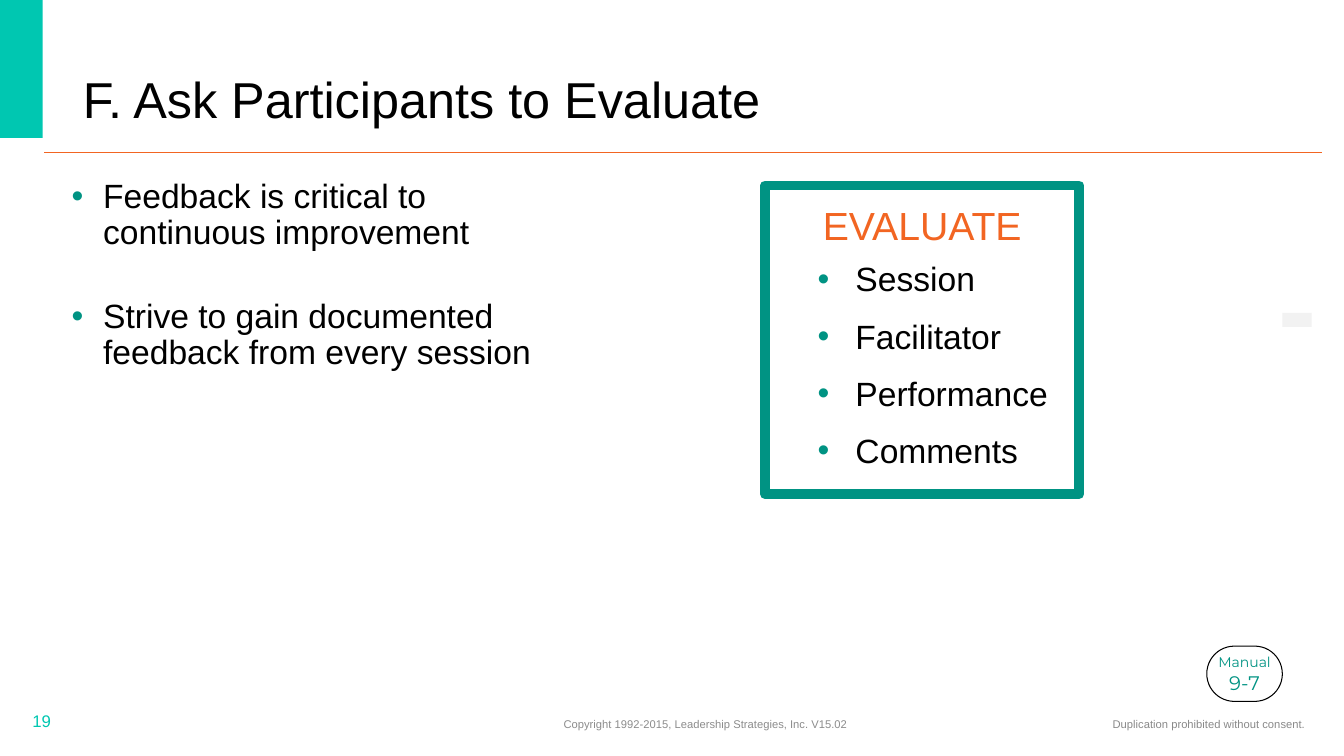
from lxml.etree import SubElement
from pptx import Presentation
from pptx.dml.color import RGBColor
from pptx.enum.shapes import MSO_CONNECTOR, MSO_SHAPE
from pptx.enum.text import MSO_ANCHOR, MSO_AUTO_SIZE, PP_ALIGN
from pptx.oxml.ns import qn
from pptx.util import Pt

# Content: each paragraph is a list of (text, size) runs
TITLE = [[("F. Ask Participants to Evaluate", 36)]]
POINTS = [[(text, 24)] for text in (
    "Feedback is critical to continuous improvement",
    "Strive to gain documented feedback from every session",
)]
EVALUATE_HEADING = [[("EVALUATE", 28)]]
EVALUATE_ITEMS = [[(text, 24)] for text in
                  ("Session", "Facilitator", "Performance", "Comments")]
MANUAL = [[("Manual\v", 10), ("9-7", 14)]]
PAGE_NUMBER = [[("19", 12)]]
COPYRIGHT = [[("Copyright 1992-2015, Leadership Strategies, Inc. V15.02", 8)]]
DUPLICATION = [[("Duplication prohibited without consent.", 8)]]

BLACK, WHITE = "000000", "FFFFFF"
TEAL, GREEN, ORANGE = "00C7B1", "009383", "F26522"


def color(value):
    return RGBColor.from_string(value)


def add_bullet(paragraph, indent):
    properties = paragraph._p.get_or_add_pPr()
    properties.set("marL", str(Pt(indent)))
    properties.set("indent", str(-Pt(indent)))
    bullet_color = SubElement(properties, qn("a:buClr"))
    SubElement(bullet_color, qn("a:srgbClr"), val=GREEN)
    SubElement(properties, qn("a:buFont"), typeface="Arial")
    SubElement(properties, qn("a:buChar"), char="•")


def write(shape, paragraphs, text_color=BLACK, font="Arial", anchor=MSO_ANCHOR.TOP,
          wrap=True, indent=0, before=0, **formats):
    frame = shape.text_frame
    frame_formats = {"word_wrap": wrap, "auto_size": MSO_AUTO_SIZE.NONE,
                     "vertical_anchor": anchor}
    for name, value in frame_formats.items():
        setattr(frame, name, value)
    for index, runs in enumerate(paragraphs):
        paragraph = frame.add_paragraph() if index else frame.paragraphs[0]
        if indent:
            add_bullet(paragraph, indent)
        paragraph.space_before = Pt(before if index else 0)
        for name, value in formats.items():
            setattr(paragraph, name, value)
        for text, size in runs:
            run = paragraph.add_run()
            run.text = text.rstrip("\v")
            for name, value in {"name": font, "size": Pt(size), "bold": False}.items():
                setattr(run.font, name, value)
            run.font.color.rgb = color(text_color)
            if text.endswith("\v"):
                paragraph.add_line_break()


def place(shape, left, top, width, height):
    box = {"left": left, "top": top, "width": width, "height": height}
    for name, value in box.items():
        setattr(shape, name, Pt(value))
    return shape


def add_text(box, paragraphs, **formats):
    write(slide.shapes.add_textbox(*map(Pt, box)), paragraphs, **formats)


def add_box(kind, box, fill, line=None, line_width=0):
    shape = slide.shapes.add_shape(kind, *map(Pt, box))
    shape.shadow.inherit = False
    shape.fill.solid()
    shape.fill.fore_color.rgb = color(fill)
    if line:
        shape.line.color.rgb = color(line)
        shape.line.width = Pt(line_width)
    else:
        shape.line.fill.background()
    return shape


presentation = Presentation()
presentation.slide_width, presentation.slide_height = Pt(960), Pt(540)
slide = presentation.slides.add_slide(presentation.slide_layouts[1])

# Corner block and rule under the title
add_box(MSO_SHAPE.RECTANGLE, (-1.5, -1.5, 32, 100), TEAL)
rule = slide.shapes.add_connector(MSO_CONNECTOR.STRAIGHT,
                                  Pt(31.5), Pt(109), Pt(944.5), Pt(109))
rule.line.color.rgb = color(ORANGE)
rule.line.width = Pt(0.5)
SubElement(rule._element.spPr, qn("a:effectLst"))

# Title and main points
title, body = slide.placeholders
write(place(title, 52, 41, 585, 55), TITLE, anchor=MSO_ANCHOR.BOTTOM,
      alignment=PP_ALIGN.LEFT, line_spacing=0.9)
write(place(body, 44, 124.5, 369, 362), POINTS, indent=22.5, before=16,
      space_after=Pt(18), line_spacing=0.9)

# Evaluate panel
add_box(MSO_SHAPE.RECTANGLE, (546.5, 132.5, 224.5, 220.5), WHITE, GREEN, 7)
add_text((540, 140.5, 237.5, 41), EVALUATE_HEADING, text_color=ORANGE,
         alignment=PP_ALIGN.CENTER)
add_text((577, 181, 183, 160), EVALUATE_ITEMS, indent=27, space_after=Pt(12))

# Manual reference badge and grey marker
badge = add_box(MSO_SHAPE.ROUNDED_RECTANGLE, (862, 461.5, 54, 39.5), WHITE, BLACK, 0.75)
badge.adjustments[0] = 0.5
write(badge, MANUAL, text_color=GREEN, font="Montserrat", anchor=MSO_ANCHOR.MIDDLE,
      wrap=False, alignment=PP_ALIGN.CENTER)
add_box(MSO_SHAPE.RECTANGLE, (916, 223.5, 21, 10), "F2F2F2")

# Footer
for box, text, text_color, alignment in (
    ((16, 500.5, 216, 29), PAGE_NUMBER, TEAL, PP_ALIGN.LEFT),
    ((260.5, 502.5, 487, 29), COPYRIGHT, "8C8C8C", PP_ALIGN.CENTER),
    ((534, 502.5, 405.5, 29), DUPLICATION, "898989", PP_ALIGN.RIGHT),
):
    add_text(box, text, text_color=text_color, anchor=MSO_ANCHOR.MIDDLE,
             alignment=alignment)

presentation.save("out.pptx")
